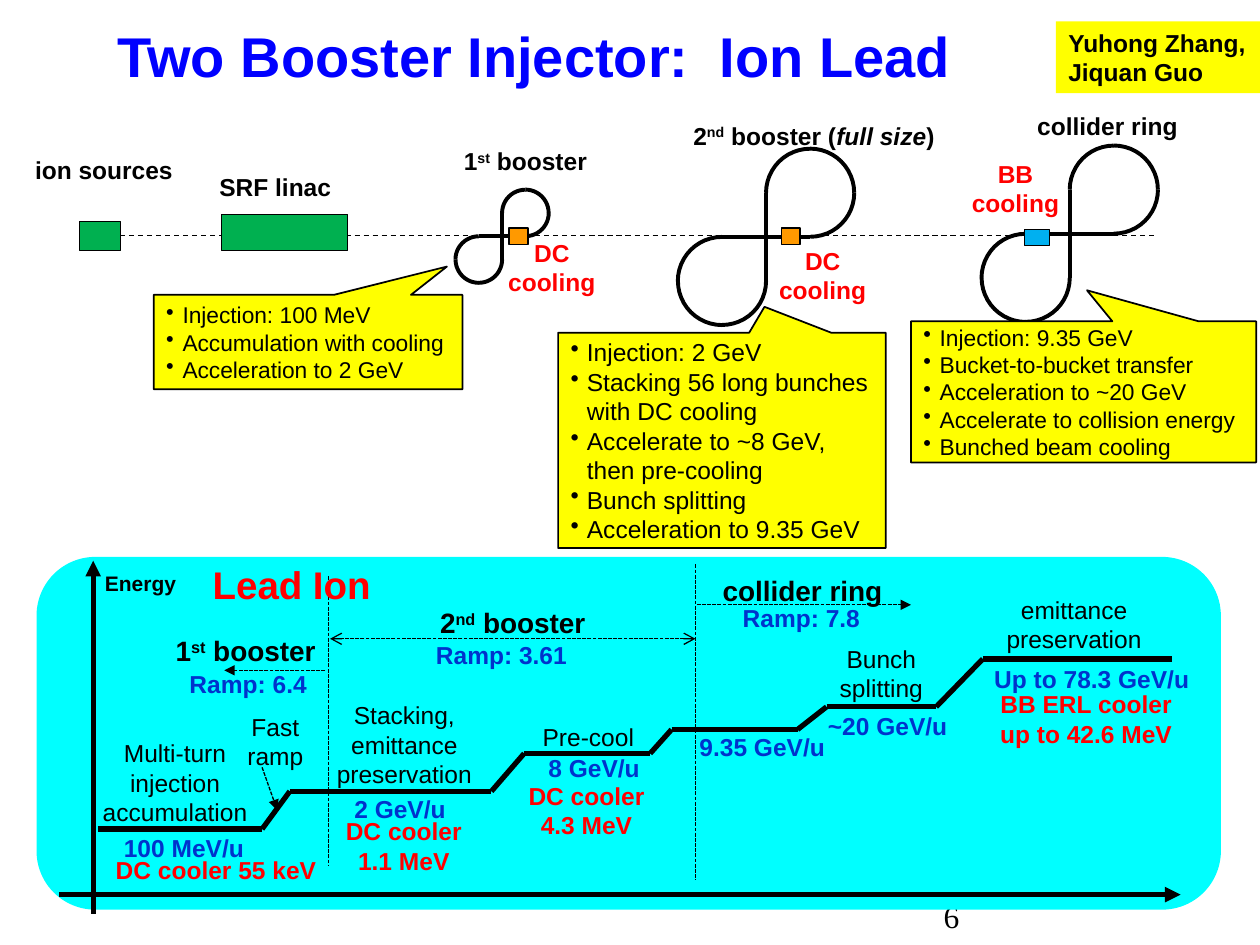
import itertools

import lxml.etree
import pptx
import pptx.dml.color
import pptx.enum.dml
import pptx.enum.shapes
import pptx.enum.text
import pptx.oxml.ns
import pptx.util

COLORS = {"black": "000000", "title": "0000FF", "energy": "0033CC", "cooling": "FF0000",
          "note": "FFFF00", "panel": "00FFFF", "source": "00B050",
          "dc": "FF9900", "bb": "00B0F0"}
SHAPES = pptx.enum.shapes.MSO_SHAPE
ALIGN = pptx.enum.text.PP_ALIGN
MIDDLE = pptx.enum.text.MSO_ANCHOR.MIDDLE
DASH = pptx.enum.dml.MSO_LINE.DASH
FINE_DASH = pptx.enum.dml.MSO_LINE.SQUARE_DOT
qn = pptx.oxml.ns.qn

# The slide is a grid of 100 columns by 75 rows; places are relative to a region's box
COLUMNS, ROWS = 100, 75
WIDTH, HEIGHT = pptx.util.Inches(10), pptx.util.Inches(7.5)

PLAIN = {"size": 14}
BOLD = {"size": 14, "bold": True}
HEADING = {"size": 16, "bold": True}
ENERGY = {"size": 14, "bold": True, "color": "energy"}
COOLING = {"size": 14, "bold": True, "color": "cooling"}
FIRST_BOOSTER = [("1", {}), ("st", {"raised": True}), (" booster", {})]
SECOND_BOOSTER = [("2", {}), ("nd", {"raised": True}), (" booster", {})]
FULL_SIZE = SECOND_BOOSTER + [(" (", {}), ("full size", {"italic": True}), (")", {})]


def rgb(name):
    return pptx.dml.color.RGBColor.from_string(COLORS[name])


def grid(box, x, y):
    return round((box[0] + x) * WIDTH / COLUMNS), round((box[1] + y) * HEIGHT / ROWS)


def frame(box, x, y, w, h):
    return *grid(box, x, y), *grid((0, 0), w, h)


def add_run(paragraph, text, style):
    run = paragraph.add_run()
    run.text = text
    values = {"name": "Arial", "bold": False, **style}
    values["size"] = pptx.util.Pt(values["size"])
    run.font.color.rgb = rgb(values.pop("color", "black"))
    if values.pop("raised", False):
        run.font._element.set("baseline", "30000")
    for key, value in values.items():
        setattr(run.font, key, value)


def fill_text(text_frame, text, style, align=ALIGN.CENTER, bullets=False):
    """Write text, one paragraph a line, or a list of (text, style) runs."""
    text_frame.word_wrap = True
    lines = [[(line, {})] for line in text.split("\n")] if isinstance(text, str) else [text]
    for index, runs in enumerate(lines):
        paragraph = text_frame.add_paragraph() if index else text_frame.paragraphs[0]
        paragraph.alignment = align
        if bullets:
            properties = paragraph._p.get_or_add_pPr()
            indent = pptx.util.Inches(0.13)
            properties.set("marL", str(indent))
            properties.set("indent", str(-indent))
            lxml.etree.SubElement(properties, qn("a:buChar")).set("char", "•")
        for part, extra in runs:
            add_run(paragraph, part, {**style, **extra})


def add_label(slide, box, place, text, style, align=ALIGN.CENTER):
    label = slide.shapes.add_textbox(*frame(box, *place))
    fill_text(label.text_frame, text, style, align)


def add_block(slide, box, place, fill, line=0.75, kind=SHAPES.RECTANGLE):
    block = slide.shapes.add_shape(kind, *frame(box, *place))
    block.shadow.inherit = False
    if fill:
        block.fill.solid()
        block.fill.fore_color.rgb = rgb(fill)
    else:
        block.fill.background()
    if line:
        block.line.color.rgb = rgb("black")
        block.line.width = pptx.util.Pt(line)
    else:
        block.line.fill.background()
    return block


def add_line(slide, box, start, end, width=0.75, dash=None, head=None, tail=None):
    line = slide.shapes.add_connector(pptx.enum.shapes.MSO_CONNECTOR.STRAIGHT,
                                      *grid(box, *start), *grid(box, *end))
    line.line.color.rgb = rgb("black")
    line.line.width = pptx.util.Pt(width)
    if dash:
        line.line.dash_style = dash
    for tag, arrow in (("a:headEnd", head), ("a:tailEnd", tail)):
        if arrow:
            lxml.etree.SubElement(line.line._ln, qn(tag)).set("type", arrow)
    lxml.etree.SubElement(line._element.spPr, qn("a:effectLst"))


def add_ring(slide, box, x, y, lobe):
    """Figure-eight ring crossing at (x, y), each lobe three quarter arcs."""
    half = lobe / 2
    add_line(slide, box, (x, y - half), (x, y + half), 2.25)
    for left, top, turns in ((x, y - lobe, (0, 270, 90)), (x - lobe, y, (180, 90, 270))):
        for turn in turns:
            arc = add_block(slide, box, (left, top, lobe, lobe), None, 2.25, SHAPES.ARC)
            arc.rotation = turn
    add_line(slide, box, (x + half, y), (x - half, y), 2.25)


def add_header(slide, box):
    title = slide.shapes.title
    title.left, title.top, title.width, title.height = frame(box, 0, 1.4, 84.8, 5.9)
    title.text_frame.vertical_anchor = MIDDLE
    fill_text(title.text_frame, "Two Booster Injector:  Ion Lead",
              {"size": 32, "bold": True, "color": "title"})
    authors = add_block(slide, box, (83.8, 1.7, 16.2, 5.7), "note", None)
    fill_text(authors.text_frame, "Yuhong Zhang, Jiquan Guo", BOLD, ALIGN.LEFT)


def add_beamline(slide, box):
    add_line(slide, box, (8.8, 10.7), (91.8, 10.7), dash=DASH)
    for ring in ((39.85, 10.75, 3.7), (60.8, 10.8, 7), (84.9, 10.55, 7)):
        add_ring(slide, box, *ring)
    # Source, linac and coolers
    for place, fill in (((6.3, 9.6, 3.3, 2.3), "source"), ((17.6, 9, 10, 2.9), "source"),
                        ((40.4, 10.1, 1.5, 1.3), "dc"), ((62, 10.1, 1.5, 1.3), "dc"),
                        ((81.3, 10.2, 2, 1.3), "bb")):
        add_block(slide, box, place, fill)
    for x, y, w, text in ((1.7, 3.8, 13.1, "ion sources"), (15.8, 5.2, 12.1, "SRF linac"),
                          (34.5, 3.1, 14.4, FIRST_BOOSTER), (51.2, 1.1, 26.8, FULL_SIZE),
                          (80.3, 0.3, 15.2, "collider ring")):
        add_label(slide, box, (x, y, w, 3.4), text, BOLD)
    for x, y, text in ((38.5, 10.4, "DC cooling"), (60, 11, "DC cooling"),
                       (75.3, 4.1, "BB cooling")):
        add_label(slide, box, (x, y, 10.6, 5.7), text, COOLING)


def add_callout(slide, box, pointer, size, text):
    callout = add_block(slide, box[:2], (0, 0, *box[2:]), "note", 1,
                        SHAPES.RECTANGULAR_CALLOUT)
    for index, value in enumerate(pointer):
        callout.adjustments[index] = value
    callout.text_frame.vertical_anchor = MIDDLE
    fill_text(callout.text_frame, text, {"size": size}, ALIGN.LEFT, bullets=True)


def add_energy_chart(slide, box):
    add_block(slide, box, (0, 0, *box[2:]), "panel", None, SHAPES.ROUNDED_RECTANGLE)
    # Axes
    add_line(slide, box, (4.5, 28.3), (4.5, 0.3), 3, tail="triangle")
    add_line(slide, box, (1.8, 26.8), (90.8, 26.8), 3, tail="triangle")
    # Energy levels, joined by ramps
    levels = ((4.9, 17.9, 21.6), (20.1, 36.1, 18.6), (38.7, 48.7, 15.6),
              (50.4, 60.4, 13.7), (62.7, 71.4, 11.9), (75.1, 90.1, 8.1))
    for start, end, y in levels:
        add_line(slide, box, (start, y), (end, y), 3)
    for (_, end, low), (start, _, high) in itertools.pairwise(levels):
        add_line(slide, box, (end, low), (start, high), 3)
    # Ring boundaries, spans and the pointer to the fast ramp
    for start, end, head, tail in (((23.2, 1.5), (23.2, 24.5), None, None),
                                   ((52.3, 0.6), (52.3, 25.6), None, None),
                                   ((52.4, 3.8), (69.4, 3.8), None, "triangle"),
                                   ((22.9, 9), (14.9, 9), None, "triangle"),
                                   ((52.3, 6.5), (23.3, 6.5), "arrow", "arrow"),
                                   ((17.9, 16.7), (19.1, 20.1), None, "triangle")):
        add_line(slide, box, start, end, dash=FINE_DASH, head=head, tail=tail)
    labels = (
        (HEADING, ((52.3, 0.8, 17, 3.7, "collider ring"), (9.4, 5.6, 14.4, 3.7, FIRST_BOOSTER),
                   (30.6, 3.4, 14.4, 3.7, SECOND_BOOSTER))),
        ({**COOLING, "size": 22}, ((12.3, -0.2, 15.9, 4.7, "Lead Ion"),)),
        ({**BOLD, "size": 12}, ((3.8, 0.6, 8.9, 3, "Energy"),)),
        (PLAIN, ((4.2, 13.9, 13.6, 8.1, "Multi-turn injection accumulation"),
                 (14.5, 11.8, 8.9, 5.7, "Fast ramp"),
                 (22.7, 10.9, 13, 8.1, "Stacking,\nemittance preservation"),
                 (38.3, 12.6, 11, 3.4, "Pre-cool"), (62.1, 6.4, 9.9, 5.7, "Bunch splitting"),
                 (75.5, 2.5, 13.7, 5.7, "emittance preservation"))),
        (ENERGY, ((5.5, 21.4, 12.4, 3.4, "100 MeV/u"), (24.1, 18.3, 9.5, 3.4, "2 GeV/u"),
                  (39.2, 15.1, 10.1, 3.4, "8 GeV/u"), (51.4, 13.4, 12.4, 3.4, "9.35 GeV/u"),
                  (61.4, 11.7, 12.3, 3.4, "~20 GeV/u"),
                  (74.7, 8, 18.1, 3.4, "Up to 78.3 GeV/u"),
                  (10.1, 8.4, 13.4, 3.4, "Ramp: 6.4"), (30.2, 6.1, 13.4, 3.4, "Ramp: 3.61"),
                  (54, 3.2, 13.4, 3.4, "Ramp: 7.8"))),
        (COOLING, ((3.7, 23.2, 21.1, 3.4, "DC cooler 55 keV"),
                   (23.5, 20.1, 11.3, 5.7, "DC cooler\n1.1 MeV"),
                   (38, 17.3, 11.3, 5.7, "DC cooler 4.3 MeV"),
                   (75.4, 10, 15.8, 5.7, "BB ERL cooler\nup to 42.6 MeV"))))
    for style, entries in labels:
        for *place, text in entries:
            add_label(slide, box, place, text, style)


def main():
    deck = pptx.Presentation()
    deck.slide_width, deck.slide_height = WIDTH, HEIGHT
    slide = deck.slides.add_slide(deck.slide_layouts[5])
    # Page number, partly behind the energy chart
    add_label(slide, (73.9, 70.7), (0, 0, 5.9, 3.3), "6",
              {"size": 18, "name": "Times New Roman"}, ALIGN.LEFT)
    add_beamline(slide, (0, 8))
    add_callout(slide, (12.2, 23.4, 24.5, 7.5), (0.45, -0.8), 13,
                "Injection: 100 MeV\nAccumulation with cooling\nAcceleration to 2 GeV")
    add_callout(slide, (44.3, 26.4, 26, 17.1), (0.13, -0.62), 14,
                "Injection: 2 GeV\nStacking 56 long bunches with DC cooling\n"
                "Accelerate to ~8 GeV, then pre-cooling\nBunch splitting\n"
                "Acceleration to 9.35 GeV")
    add_callout(slide, (72.3, 25.5, 27.4, 11.2), (0.01, -0.72), 13,
                "Injection: 9.35 GeV\nBucket-to-bucket transfer\nAcceleration to ~20 GeV\n"
                "Accelerate to collision energy\nBunched beam cooling")
    add_energy_chart(slide, (2.9, 44.2, 94, 28))
    add_header(slide, (0, 0))
    deck.save("out.pptx")


if __name__ == "__main__":
    main()
